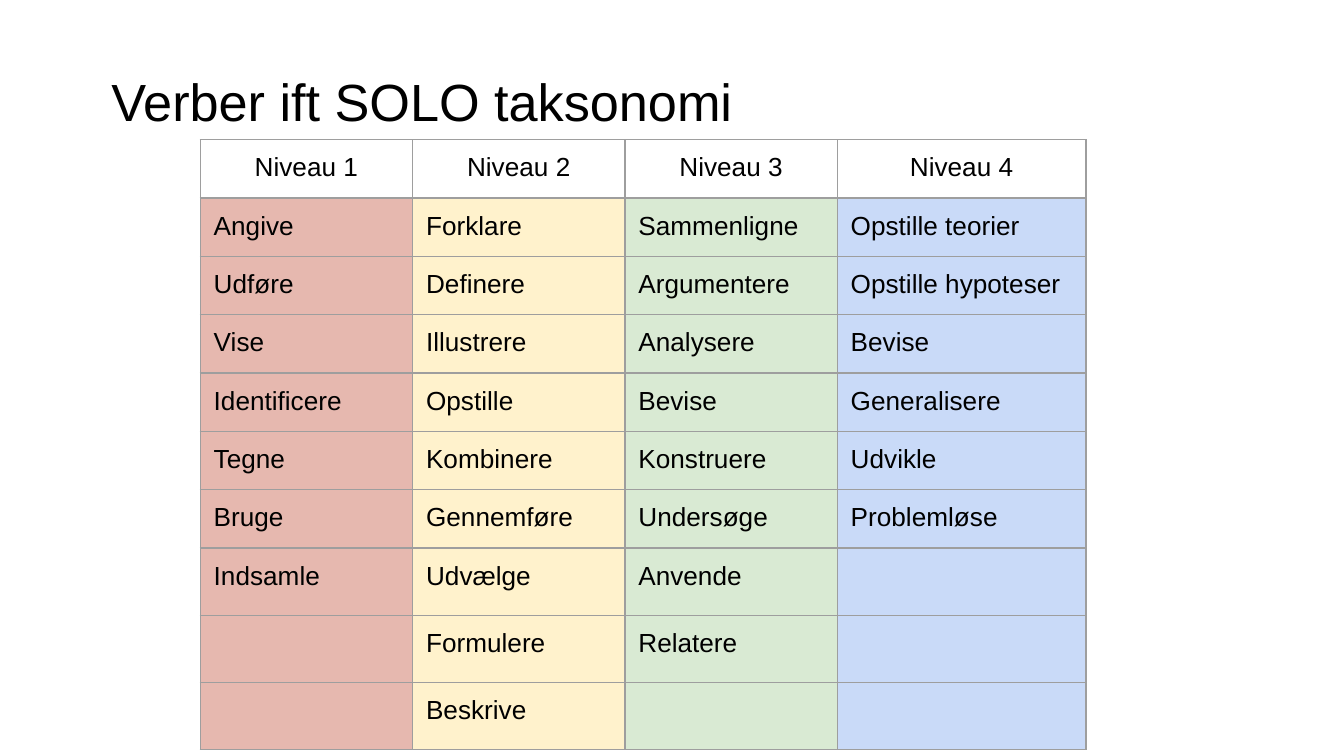
from itertools import zip_longest

from lxml.etree import SubElement
from pptx import Presentation
from pptx.dml.color import RGBColor
from pptx.enum.text import MSO_ANCHOR, PP_ALIGN
from pptx.oxml.ns import qn
from pptx.util import Inches, Pt

FONT = "Arial"

# Heading, fill and verbs of each column
LEVELS = [
    ("Niveau 1", "E6B8AF", ["Angive", "Udføre", "Vise", "Identificere",
                            "Tegne", "Bruge", "Indsamle"]),
    ("Niveau 2", "FFF2CC", ["Forklare", "Definere", "Illustrere", "Opstille",
                            "Kombinere", "Gennemføre", "Udvælge", "Formulere",
                            "Beskrive"]),
    ("Niveau 3", "D9EAD3", ["Sammenligne", "Argumentere", "Analysere", "Bevise",
                            "Konstruere", "Undersøge", "Anvende", "Relatere"]),
    ("Niveau 4", "C9DAF8", ["Opstille teorier", "Opstille hypoteser", "Bevise",
                            "Generalisere", "Udvikle", "Problemløse"]),
]
COL_WIDTHS = [1.58, 1.58, 1.58, 1.85]
ROW_HEIGHTS = [0.11] + [0.42] * 9  # rows grow to fit their text


def rgb(color):
    return RGBColor.from_string(color)


def write(tf, text, size=14, color="000000", align=PP_ALIGN.LEFT):
    p = tf.paragraphs[0]
    p.alignment = align
    if text:
        r = p.add_run()
        r.text = text
        r.font.name = FONT
        r.font.size = Pt(size)
        r.font.color.rgb = rgb(color)
    # The paragraph end sets the line height of an empty cell
    end = SubElement(p._p, qn("a:endParaRPr"), sz=str(size * 100))
    SubElement(end, qn("a:latin"), typeface=FONT)


def set_insets(target, inset=0.1):
    target.margin_left = target.margin_right = Inches(inset)
    target.margin_top = target.margin_bottom = Inches(inset)


def set_borders(cell, color="9E9E9E", width=0.75):
    tcPr = cell._tc.get_or_add_tcPr()
    for side in ("a:lnL", "a:lnR", "a:lnT", "a:lnB"):
        ln = SubElement(tcPr, qn(side), w=str(Pt(width)))
        fill = SubElement(ln, qn("a:solidFill"))
        SubElement(fill, qn("a:srgbClr"), val=color)


def format_cell(cell, text, fill, align=PP_ALIGN.LEFT):
    set_insets(cell)
    set_borders(cell)  # borders come before the fill in the XML
    cell.fill.solid()
    cell.fill.fore_color.rgb = rgb(fill)
    write(cell.text_frame, text, size=14 if text else 18, align=align)


def add_title(s, text):
    sp = s.shapes.add_textbox(Inches(0.73), Inches(0.42), Inches(9.32), Inches(0.63))
    tf = sp.text_frame
    tf.word_wrap = True
    tf.vertical_anchor = MSO_ANCHOR.BOTTOM
    set_insets(tf)
    tf.margin_bottom = Inches(0.07)
    write(tf, text, size=28)


def add_verb_table(s):
    size = Inches(3.28)
    frame = s.shapes.add_table(len(ROW_HEIGHTS), len(LEVELS),
                               Inches(1.49), Inches(1.04), size, size)
    table = frame.table
    table.first_row = table.horz_banding = False
    for column, width in zip(table.columns, COL_WIDTHS):
        column.width = Inches(width)
    for row, height in zip(table.rows, ROW_HEIGHTS):
        row.height = Inches(height)
    # Changing rows and columns resizes the frame, so set it last
    frame.width = frame.height = size

    # Header row, then the verbs; short columns end in empty cells
    for col, (heading, fill, verbs) in enumerate(LEVELS):
        format_cell(table.cell(0, col), heading, "FFFFFF", PP_ALIGN.CENTER)
        body_rows = range(1, len(ROW_HEIGHTS))
        for row, verb in zip_longest(body_rows, verbs):
            format_cell(table.cell(row, col), verb, fill)


def main():
    prs = Presentation()
    prs.slide_width = Inches(10)
    prs.slide_height = prs.slide_width * 9 // 16
    s = prs.slides.add_slide(prs.slide_layouts[6])
    add_title(s, "Verber ift SOLO taksonomi")
    add_verb_table(s)
    prs.save("out.pptx")


if __name__ == "__main__":
    main()
